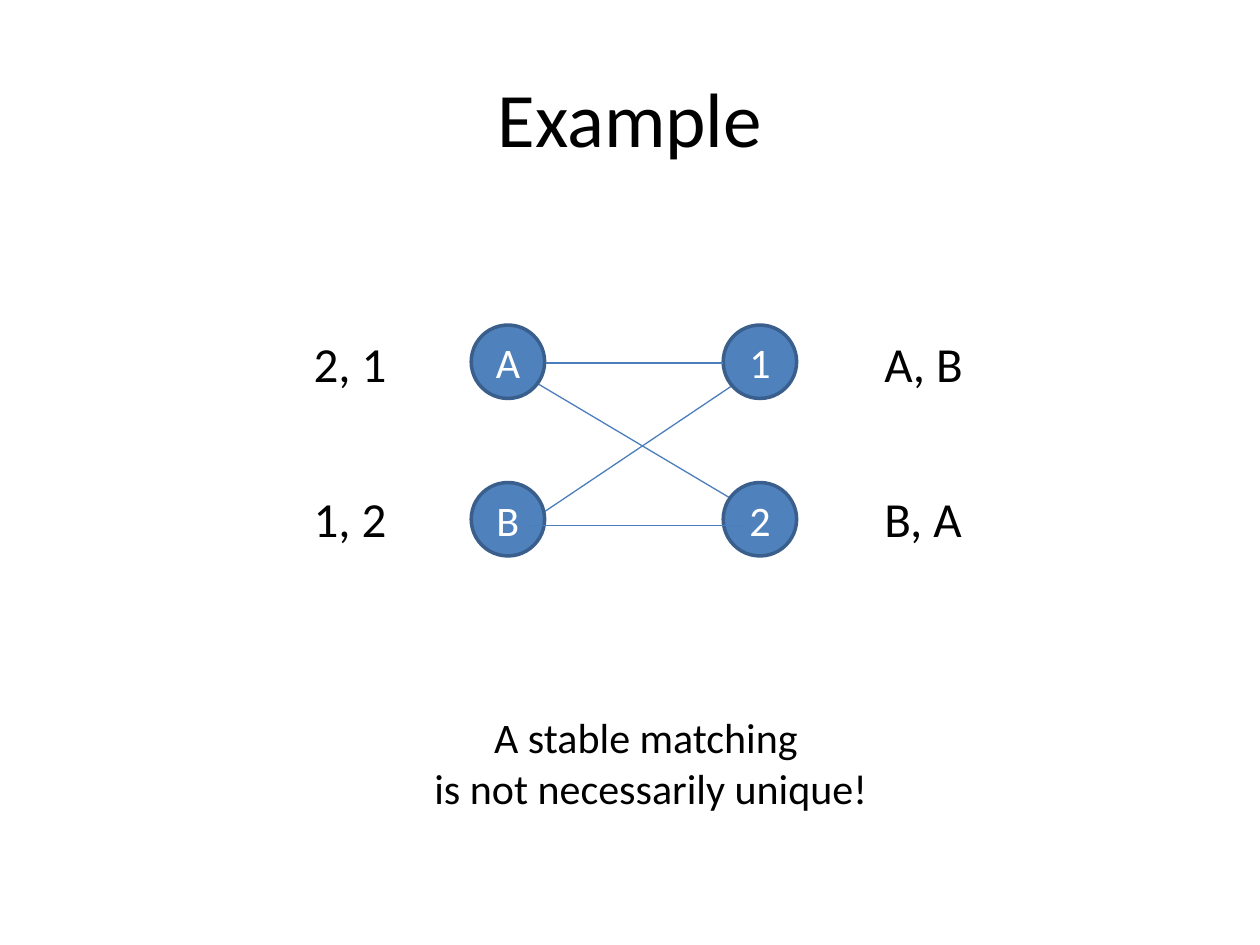
from lxml.etree import SubElement
from pptx import Presentation
from pptx.dml.color import RGBColor
from pptx.enum.shapes import MSO_CONNECTOR, MSO_SHAPE
from pptx.enum.text import MSO_ANCHOR, MSO_AUTO_SIZE, PP_ALIGN
from pptx.oxml.ns import qn
from pptx.util import Inches, Pt

COLORS = {
    "background": "FFFFFF",
    "text": "000000",
    "node": "4F81BD",
    "node_outline": "3A5F8C",
    "node_text": "FFFFFF",
    "edge": "4B7EBC",
}
COLUMNS, ROWS = 40, 30
TITLE_ONLY = 5


class SlideBuilder:
    font_name = "Calibri"

    def __init__(self, presentation):
        self.column = presentation.slide_width / COLUMNS
        self.row = presentation.slide_height / ROWS
        self.slide = presentation.slides.add_slide(presentation.slide_layouts[TITLE_ONLY])
        self.paint(self.slide.background.fill, "background")

    def paint(self, fill, color):
        fill.solid()
        fill.fore_color.rgb = RGBColor.from_string(COLORS[color])

    def place(self, *lengths):
        units = (self.column, self.row) * 2
        return [round(length * unit) for length, unit in zip(lengths, units)]

    def set_text(self, shape, text, size, color="text", align=PP_ALIGN.CENTER):
        paragraph = shape.text_frame.paragraphs[0]
        paragraph.text = text
        paragraph.alignment = align
        paragraph.font.name = self.font_name
        paragraph.font.size = Pt(size)
        paragraph.font.color.rgb = RGBColor.from_string(COLORS[color])

    def title(self, text, *box):
        shape = self.slide.shapes.title
        shape.left, shape.top, shape.width, shape.height = self.place(*box)
        shape.text_frame.vertical_anchor = MSO_ANCHOR.MIDDLE
        self.set_text(shape, text, 44)

    def node(self, text, *box):
        shape = self.slide.shapes.add_shape(MSO_SHAPE.OVAL, *self.place(*box))
        shape.shadow.inherit = False
        self.paint(shape.fill, "node")
        self.paint(shape.line.fill, "node_outline")
        shape.line.width = Pt(2)
        shape.text_frame.vertical_anchor = MSO_ANCHOR.MIDDLE
        self.set_text(shape, text, 24, "node_text")

    def edge(self, *ends):
        connector = self.slide.shapes.add_connector(MSO_CONNECTOR.STRAIGHT, *self.place(*ends))
        self.paint(connector.line.fill, "edge")
        connector.line.width = Pt(0.75)
        SubElement(connector._element.spPr, qn("a:effectLst"))

    def label(self, text, size, *box, align=PP_ALIGN.LEFT):
        shape = self.slide.shapes.add_textbox(*self.place(*box))
        shape.text_frame.word_wrap = False
        shape.text_frame.auto_size = MSO_AUTO_SIZE.SHAPE_TO_FIT_TEXT
        self.set_text(shape, text, size, align=align)


def main():
    presentation = Presentation()
    presentation.slide_width, presentation.slide_height = Inches(10), Inches(7.5)
    builder = SlideBuilder(presentation)

    builder.edge(15.96, 11.52, 24.64, 16.68)
    builder.edge(16.64, 16.68, 24.32, 11.52)
    builder.title("Example", 2, 1.2, 36, 5)

    for side, names in enumerate(("AB", "12")):
        for level, name in enumerate(names):
            builder.node(name, 14.96 + 8 * side, 10.32 + 5 * level, 2.33, 2.33)

    preferences = [(9.56, 3.16, ("2, 1", "1, 2")), (27.68, 3.32, ("A, B", "B, A"))]
    for left, width, rankings in preferences:
        for level, ranking in enumerate(rankings):
            builder.label(ranking, 28, left, 10.4 + 4.9 * level, width, 2.28)

    builder.edge(17.32, 11.52, 22.96, 11.52)
    builder.edge(16.64, 16.68, 23.64, 16.68)
    builder.label("A stable matching \vis not necessarily unique!", 24,
                  13.32, 22.4, 14.68, 3.64, align=PP_ALIGN.CENTER)

    presentation.save("out.pptx")


if __name__ == "__main__":
    main()
